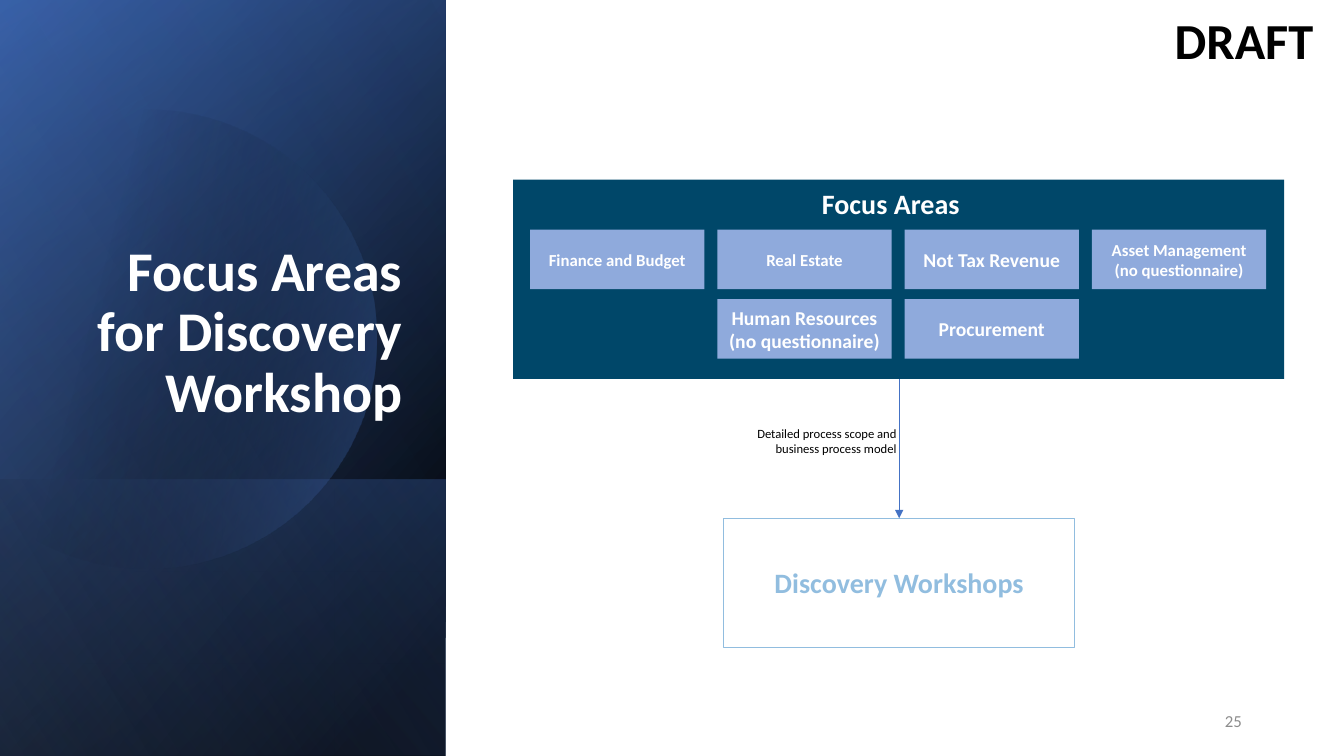
import math

import lxml.etree
import pptx
import pptx.dml.color
import pptx.enum.shapes
import pptx.enum.text
import pptx.oxml.ns
import pptx.util

Cm = pptx.util.Cm
Pt = pptx.util.Pt
ALIGN = pptx.enum.text.PP_ALIGN
ANCHOR = pptx.enum.text.MSO_ANCHOR
RECTANGLE = pptx.enum.shapes.MSO_SHAPE.RECTANGLE
qn = pptx.oxml.ns.qn


class Theme:
    font = "Calibri"
    white, black, gray = "FFFFFF", "000000", "8C8C8C"
    teal, card, sky = "004769", "8FAADC", "91BDDF"
    blue, deep_blue = "4472C4", "2F5597"
    title, draft, heading, large, small, note = 40, 36, 20, 14, 12, 9


def rgb(value):
    return pptx.dml.color.RGBColor.from_string(value)


def style(shape, fill=None, line=None, gradient=None):
    """Set a solid or gradient fill, where gradient is (angle, stops)."""
    shape.shadow.inherit = False
    shape.fill.background()
    shape.line.fill.background()
    if fill:
        shape.fill.solid()
        shape.fill.fore_color.rgb = rgb(fill)
    if line:
        shape.line.color.rgb = rgb(line)
        shape.line.width = Pt(0.5)
    if gradient:
        angle, stops = gradient
        properties = shape._element.spPr
        grad_fill = lxml.etree.Element(qn("a:gradFill"), rotWithShape="1")
        stop_list = lxml.etree.SubElement(grad_fill, qn("a:gsLst"))
        for position, color, opacity in stops:
            stop = lxml.etree.SubElement(stop_list, qn("a:gs"), pos=str(position * 1000))
            color_node = lxml.etree.SubElement(stop, qn("a:srgbClr"), val=color)
            if opacity < 100:
                lxml.etree.SubElement(color_node, qn("a:alpha"), val=str(opacity * 1000))
        lxml.etree.SubElement(grad_fill, qn("a:lin"), ang=str(angle * 60000), scaled="0")
        properties.replace(properties.find(qn("a:noFill")), grad_fill)


def write(shape, text, size, color, align=ALIGN.CENTER, anchor=ANCHOR.MIDDLE,
          bold=True, inset=(0.25, 0.2), spacing=None):
    frame = shape.text_frame
    horizontal, vertical = map(Cm, inset)
    frame_format = {
        "word_wrap": True, "vertical_anchor": anchor,
        "margin_left": horizontal, "margin_right": horizontal,
        "margin_top": vertical, "margin_bottom": vertical,
    }
    for name, value in frame_format.items():
        setattr(frame, name, value)
    paragraph = frame.paragraphs[0]
    paragraph.alignment = align
    paragraph.line_spacing = spacing
    run = paragraph.add_run()
    run.text = text
    for name, value in {"name": Theme.font, "size": Pt(size), "bold": bold}.items():
        setattr(run.font, name, value)
    run.font.color.rgb = rgb(color)


presentation = pptx.Presentation()
presentation.slide_width = Cm(33.87)
presentation.slide_height = Cm(19.05)
slide = presentation.slides.add_slide(presentation.slide_layouts[6])
shapes = slide.shapes

# Sidebar layers: top, height, gradient angle, stops (position, colour, opacity)
side_width = 11.23
side_layers = [
    (0, 19.05, 50, [(8, Theme.black, 100), (100, Theme.deep_blue, 100)]),
    (0, 19.05, 30, [(0, Theme.black, 0), (99, Theme.blue, 46)]),
    (12.09, 6.96, 130, [(2, Theme.blue, 29), (100, Theme.black, 30)]),
    "disc",
    (0, 19.05, 120, [(0, Theme.black, 0), (99, Theme.card, 11)]),
]
for layer in side_layers:
    if layer == "disc":
        # Circle cut off by the left edge of the slide
        center_x, center_y, radius = 3.7, 8.55, 5.78
        reach = math.pi - math.acos(center_x / radius)
        angles = [reach * step / 60 for step in range(-60, 61)]
        points = [(Cm(center_x + radius * math.cos(angle)),
                   Cm(center_y + radius * math.sin(angle))) for angle in angles]
        builder = shapes.build_freeform(*points[0])
        builder.add_line_segments(points[1:], close=True)
        disc = builder.convert_to_shape()
        style(disc, gradient=(14, [(29, Theme.black, 0), (100, Theme.blue, 43)]))
        continue
    top, height, angle, stops = layer
    panel = shapes.add_shape(
        RECTANGLE, Cm((side_width - height) / 2), Cm(top + (height - side_width) / 2),
        Cm(height), Cm(side_width))
    panel.rotation = 90
    panel._element.spPr.find(qn("a:xfrm")).set("flipH", "1")
    style(panel, gradient=(angle, stops))

# Title
title = shapes.add_textbox(Cm(1.5), Cm(1.42), Cm(8.89), Cm(9.4))
write(title, "Focus Areas for Discovery Workshop", Theme.title, Theme.white,
      ALIGN.RIGHT, ANCHOR.BOTTOM, inset=(0.25, 0.13), spacing=0.9)

# Focus area block
block = shapes.add_shape(RECTANGLE, Cm(12.93), Cm(4.53), Cm(19.43), Cm(5.02))
style(block, Theme.teal)
heading = shapes.add_textbox(Cm(15.77), Cm(4.53), Cm(13.36), Cm(1.2))
write(heading, "Focus Areas", Theme.heading, Theme.white)

# Cards: column, row, text, size
cards = [
    (0, 0, "Finance and Budget", Theme.small),
    (1, 0, "Real Estate", Theme.small),
    (2, 0, "Not Tax Revenue", Theme.large),
    (3, 0, "Asset Management (no questionnaire)", Theme.small),
    (1, 1, "Human Resources (no questionnaire)", Theme.large),
    (2, 1, "Procurement", Theme.large),
]
for column, row, text, size in cards:
    card = shapes.add_shape(RECTANGLE, Cm(13.36 + 4.72 * column), Cm(5.79 + 1.75 * row),
                            Cm(4.39), Cm(1.5))
    style(card, Theme.card)
    write(card, text, size, Theme.white)

# Workshops box
workshops = shapes.add_shape(RECTANGLE, Cm(18.24), Cm(13.06), Cm(8.84), Cm(3.25))
style(workshops, line=Theme.sky)
write(workshops, "Discovery Workshops", Theme.heading, Theme.sky)

# Arrow from the block to the workshops box
arrow = shapes.add_connector(pptx.enum.shapes.MSO_CONNECTOR.STRAIGHT,
                             Cm(22.66), Cm(9.55), Cm(22.66), Cm(13.06))
arrow.line.color.rgb = rgb(Theme.blue)
arrow.line.width = Pt(0.5)
lxml.etree.SubElement(arrow.line._get_or_add_ln(), qn("a:tailEnd"), type="triangle")
lxml.etree.SubElement(arrow._element.spPr, qn("a:effectLst"))

# Arrow note
note = shapes.add_textbox(Cm(18.14), Cm(10.72), Cm(4.45), Cm(1.14))
write(note, "Detailed process scope and business process model", Theme.note, Theme.black,
      ALIGN.RIGHT, ANCHOR.TOP, bold=False, inset=(0, 0))

# Draft mark and page number
draft = shapes.add_textbox(Cm(24.79), Cm(0.1), Cm(8.56), Cm(1.8))
write(draft, "DRAFT", Theme.draft, Theme.black, ALIGN.RIGHT, ANCHOR.TOP, inset=(0.25, 0.13))
page_number = shapes.add_textbox(Cm(23.93), Cm(17.65), Cm(7.62), Cm(1.02))
write(page_number, "25", Theme.small, Theme.gray, ALIGN.RIGHT, bold=False, inset=(0.25, 0.13))

presentation.save("out.pptx")
